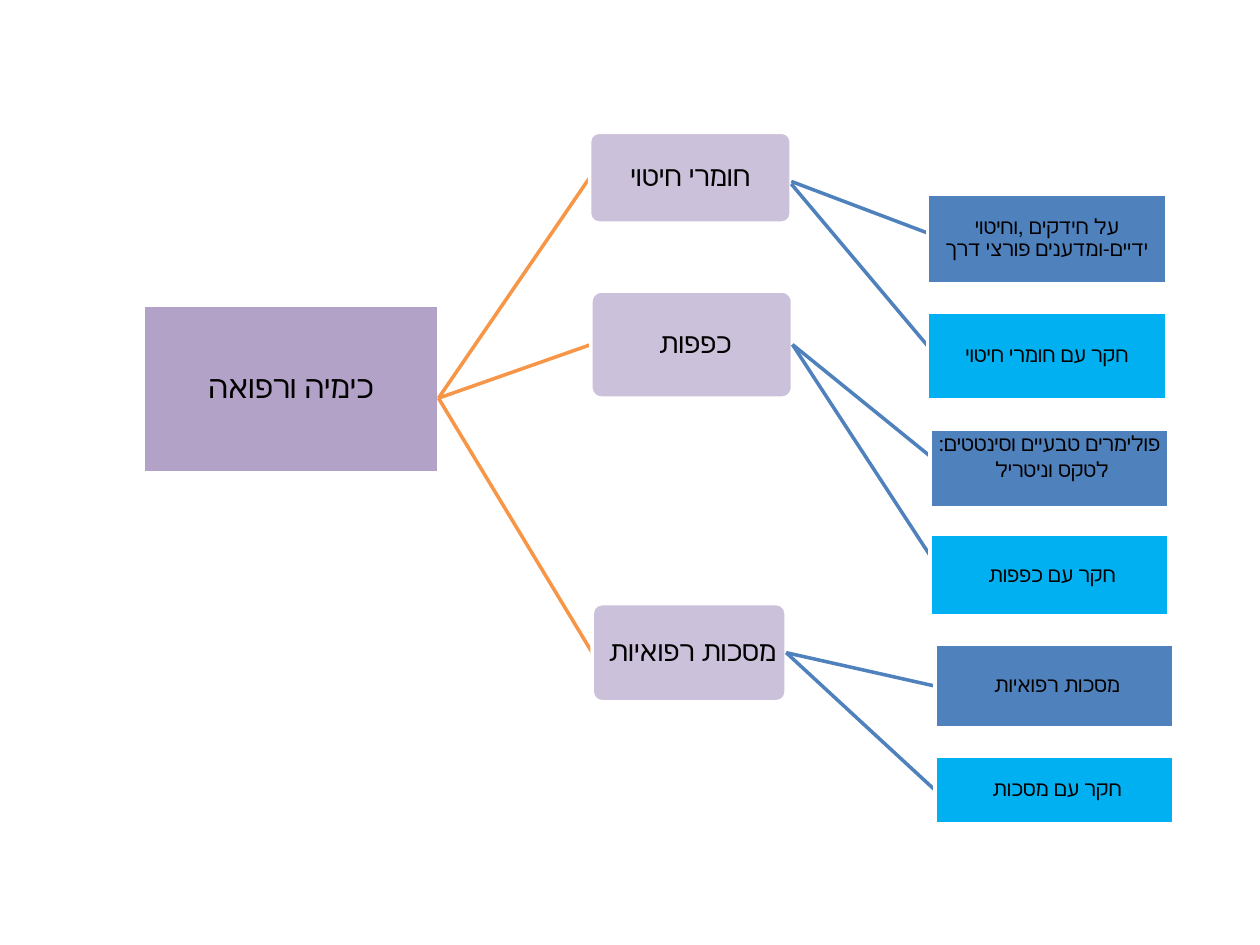
from dataclasses import dataclass

from lxml.etree import SubElement
from pptx import Presentation
from pptx.dml.color import RGBColor
from pptx.enum.lang import MSO_LANGUAGE_ID
from pptx.enum.shapes import MSO_CONNECTOR, MSO_SHAPE
from pptx.enum.text import MSO_ANCHOR, PP_ALIGN
from pptx.oxml.ns import qn
from pptx.shapes.autoshape import Shape
from pptx.shapes.connector import Connector
from pptx.util import Inches, Pt

FONT = "Calibri"
BLACK, WHITE = "000000", "FFFFFF"
ROOT_FILL, BRANCH_FILL = "B3A2C7", "CCC1DA"
LESSON_FILL, INQUIRY_FILL = "4F81BD", "00B0F0"
BRANCH_LINE, LEAF_LINE = "F79646", "4F81BD"
RIGHT_SITE, LEFT_SITE = 3, 1
LEAF_WIDTH = 1.9
JOIN_TOLERANCE = Inches(0.02)

Point = tuple[float, float]


@dataclass(frozen=True)
class Style:
    preset: MSO_SHAPE
    fill: str
    size: int
    inset: float


@dataclass(frozen=True)
class Node:
    """A box and the two ends of the line that leads to it."""
    text: str
    box: tuple[float, float, float, float]
    start: Point
    end: Point
    anchor: MSO_ANCHOR = MSO_ANCHOR.MIDDLE
    spacing: float = 0.9


@dataclass(frozen=True)
class Branch:
    topic: Node
    lesson: Node
    inquiry: Node


ROOT = Style(MSO_SHAPE.RECTANGLE, ROOT_FILL, 18, 0.05)
TOPIC = Style(MSO_SHAPE.ROUNDED_RECTANGLE, BRANCH_FILL, 16, 0.03)
LESSON = Style(MSO_SHAPE.RECTANGLE, LESSON_FILL, 12, 0.01)
INQUIRY = Style(MSO_SHAPE.RECTANGLE, INQUIRY_FILL, 12, 0.01)

HUB = (3.48, 3.16)
SUBJECT = Node("כימיה ורפואה", (1.14, 2.42, 2.34, 1.33), HUB, HUB)
BRANCHES = [
    Branch(
        Node("חומרי חיטוי", (4.68, 1.05, 1.6, 0.72), HUB, (4.68, 1.41)),
        Node("על חידקים ,וחיטוי ידיים-ומדענים פורצי דרך",
             (7.36, 1.54, LEAF_WIDTH, 0.71), (6.28, 1.44), (7.39, 1.86)),
        Node("חקר עם חומרי חיטוי",
             (7.36, 2.48, LEAF_WIDTH, 0.69), (6.28, 1.46), (7.4, 2.79)),
    ),
    Branch(
        Node("כפפות ", (4.69, 2.31, 1.6, 0.85), HUB, (4.68, 2.73)),
        Node("פולימרים טבעיים וסינטטים: לטקס וניטריל ",
             (7.38, 3.41, LEAF_WIDTH, 0.62), (6.29, 2.73), (7.48, 3.7),
             MSO_ANCHOR.TOP, 1.0),
        Node("חקר עם כפפות ",
             (7.38, 4.24, LEAF_WIDTH, 0.65), (6.29, 2.73), (7.48, 4.56)),
    ),
    Branch(
        Node("מסכות רפואיות ", (4.7, 4.79, 1.54, 0.78), HUB, (4.68, 5.19)),
        Node("מסכות רפואיות ",
             (7.42, 5.11, LEAF_WIDTH, 0.67), (6.22, 5.19), (7.42, 5.44)),
        Node("חקר עם מסכות ",
             (7.42, 6, LEAF_WIDTH, 0.54), (6.22, 5.19), (7.42, 6.27)),
    ),
]


def color(hex_code: str) -> RGBColor:
    return RGBColor.from_string(hex_code)


def draw_box(shapes, node: Node, style: Style) -> Shape:
    box = shapes.add_shape(style.preset, *map(Inches, node.box))
    box.shadow.inherit = False
    if style.preset == MSO_SHAPE.ROUNDED_RECTANGLE:
        box.adjustments[0] = 0.1
    box.fill.solid()
    box.fill.fore_color.rgb = color(style.fill)
    box.line.color.rgb = color(WHITE)
    box.line.width = Pt(2)

    frame = box.text_frame
    frame.word_wrap = True
    frame.vertical_anchor = node.anchor
    frame.margin_left = frame.margin_right = Inches(style.inset)
    frame.margin_top = frame.margin_bottom = Inches(style.inset)

    # Right-to-left paragraph
    paragraph = frame.paragraphs[0]
    paragraph.alignment = PP_ALIGN.CENTER
    paragraph.line_spacing = node.spacing
    paragraph._p.get_or_add_pPr().set("rtl", "1")
    run = paragraph.add_run()
    run.text = node.text
    run.font.size = Pt(style.size)
    run.font.name = FONT
    run.font.language_id = MSO_LANGUAGE_ID.HEBREW
    run.font.color.rgb = color(BLACK)
    return box


def draw_line(shapes, node: Node, line_color: str) -> Connector:
    line = shapes.add_connector(
        MSO_CONNECTOR.STRAIGHT, *map(Inches, node.start + node.end))
    line.line.color.rgb = color(line_color)
    line.line.width = Pt(2)
    SubElement(line._element.spPr, qn("a:effectLst"))
    return line


def meets_side(x: int, y: int, box: Shape, side_x: int) -> bool:
    middle_y = box.top + box.height // 2
    return max(abs(x - side_x), abs(y - middle_y)) <= JOIN_TOLERANCE


def add_child(shapes, parent: Shape, node: Node, style: Style,
              line_color: str) -> Shape:
    """Draw the line beneath its target box and join the ends that meet."""
    line = draw_line(shapes, node, line_color)
    box = draw_box(shapes, node, style)
    if meets_side(line.begin_x, line.begin_y, parent,
                  parent.left + parent.width):
        line.begin_connect(parent, RIGHT_SITE)
    if meets_side(line.end_x, line.end_y, box, box.left):
        line.end_connect(box, LEFT_SITE)
    return box


def main() -> None:
    presentation = Presentation()
    presentation.slide_width = Inches(10)
    presentation.slide_height = Inches(7.5)
    slide = presentation.slides.add_slide(presentation.slide_layouts[6])
    shapes = slide.shapes

    # Subject, then each topic with its lesson and inquiry
    subject = draw_box(shapes, SUBJECT, ROOT)
    for branch in BRANCHES:
        topic = add_child(shapes, subject, branch.topic, TOPIC, BRANCH_LINE)
        add_child(shapes, topic, branch.lesson, LESSON, LEAF_LINE)
        add_child(shapes, topic, branch.inquiry, INQUIRY, LEAF_LINE)

    presentation.save("out.pptx")


if __name__ == "__main__":
    main()
